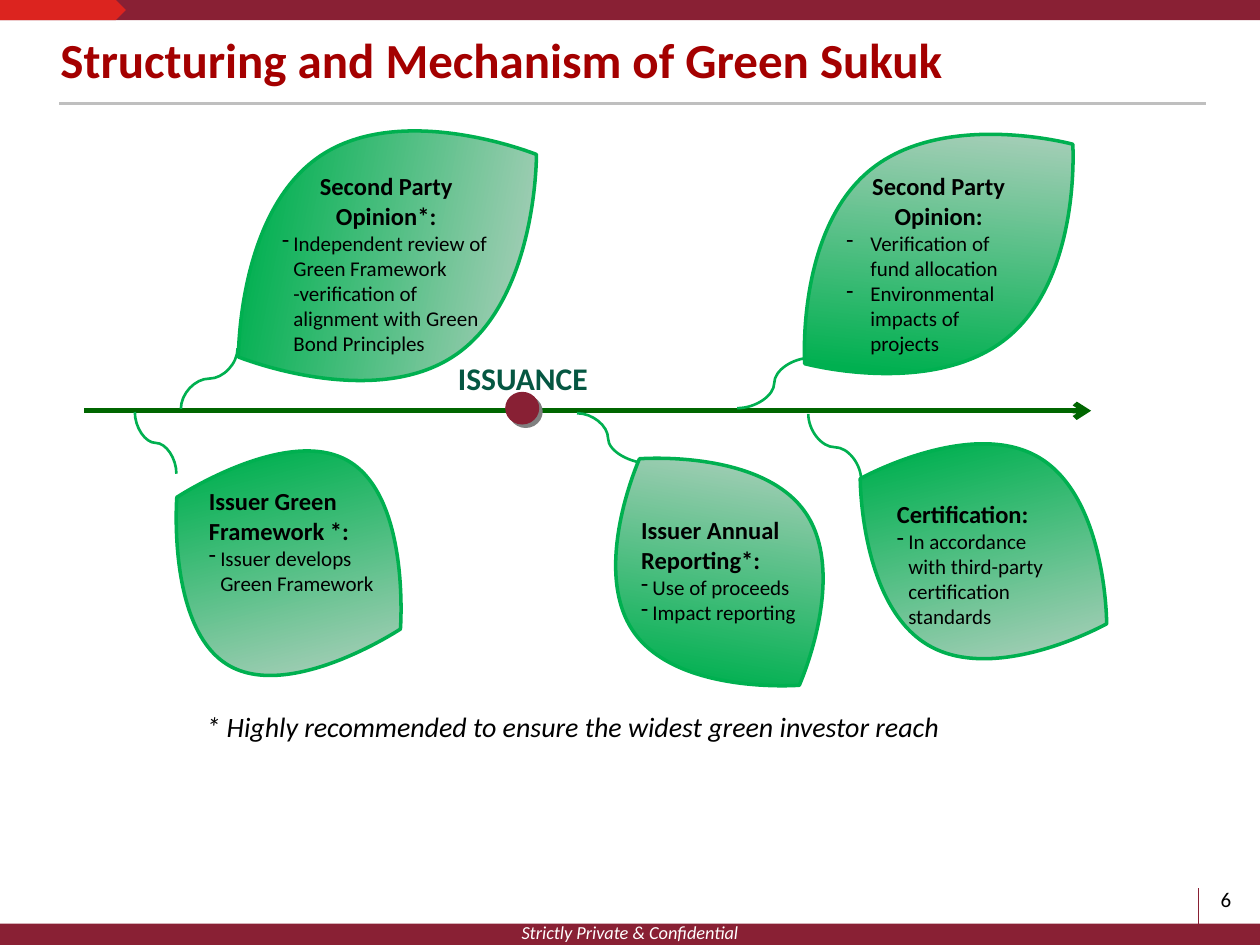
import pptx
import pptx.util
import pptx.oxml
import pptx.oxml.ns
from pptx.dml.color import RGBColor
from pptx.enum.shapes import MSO_CONNECTOR, MSO_SHAPE
from pptx.enum.text import MSO_ANCHOR, MSO_AUTO_SIZE, PP_ALIGN

Inches, Pt = pptx.util.Inches, pptx.util.Pt
FONT = "Calibri"
C = {"maroon": "892034", "dot": "882034", "red": "DC241F", "title": "A40000",
     "rule": "BFBFBF", "axis": "006600", "leaf": "00B050", "pale": "D7D7D7",
     "issuance": "055742", "shadow": "808080", "black": "000000", "white": "FFFFFF"}

# heading paragraphs, bullets, leaf box, rotation, gradient angle, text box, indent, heading alignment
LEAVES = [
    (["Second Party Opinion*:"],
     ["Independent review of Green Framework -verification of alignment with Green Bond Principles"],
     (2.12, 0.6, 1.91, 2.86), 55.8, 135, (2.14, 1.31, 1.85, 1.77), 0.09, PP_ALIGN.CENTER),
    (["Issuer Green", "Framework *:"], ["Issuer develops Green Framework"],
     (1.35, 3.44, 1.88, 2.06), 120.5, 135, (1.56, 3.81, 1.54, 0.98), 0.09, PP_ALIGN.LEFT),
    (["Certification:"], ["In accordance with third-party certification standards"],
     (6.94, 3.24, 1.73, 2.27), 120.5, 135, (7.02, 3.91, 1.51, 1.14), 0.09, PP_ALIGN.LEFT),
    (["Issuer Annual Reporting*:"], ["Use of proceeds", "Impact reporting"],
     (4.88, 3.44, 1.66, 2.2), 324.8, 135, (4.99, 4.04, 1.44, 0.98), 0.09, PP_ALIGN.LEFT),
    (["Second Party Opinion:"],
     ["Verification of fund allocation", "Environmental impacts of projects"],
     (6.59, 0.64, 1.72, 2.75), 230.7, 225, (6.62, 1.31, 1.66, 1.77), 0.19, PP_ALIGN.CENTER),
]
# frame, rotation, flips, bend position
STEMS = [
    ((1.42, 2.78, 0.48, 0.45), 90, "hv", 0.5),
    ((0.99, 3.35, 0.49, 0.33), 270, "v", 0.5),
    ((6.36, 3.34, 0.53, 0.42), 270, "v", 0.5),
    ((5.85, 2.84, 0.59, 0.4), 0, "v", 0.5),
    ((4.58, 3.28, 0.59, 0.4), 0, "", 0.417),
]


def rgb(name):
    return RGBColor.from_string(C[name])


def xml(tag, attrs="", inner=""):
    ns = pptx.oxml.ns.nsdecls("a")
    return pptx.oxml.parse_xml(f"<a:{tag} {ns} {attrs}>{inner}</a:{tag}>")


def add_run(p, text, size, color="black", bold=False, italic=False):
    r = p.add_run()
    r.text = text
    f = r.font
    f.name, f.size, f.bold, f.italic = FONT, Pt(size), bold, italic
    f.color.rgb = rgb(color)


def add_text(s, box, grow=True):
    tf = s.shapes.add_textbox(*map(Inches, box)).text_frame
    tf.word_wrap = True
    if grow:
        tf.auto_size = MSO_AUTO_SIZE.SHAPE_TO_FIT_TEXT
    return tf


def add_label(s, box, text, size, color="black", align=PP_ALIGN.LEFT, **style):
    tf = add_text(s, box)
    p = tf.paragraphs[0]
    p.alignment = align
    add_run(p, text, size, color, **style)


def add_block(s, kind, box, color):
    sp = s.shapes.add_shape(kind, *map(Inches, box))
    sp.shadow.inherit = False
    sp.fill.solid()
    sp.fill.fore_color.rgb = rgb(color)
    sp.line.fill.background()
    return sp


def add_line(s, x1, y1, x2, y2, color, width, kind=MSO_CONNECTOR.STRAIGHT):
    cxn = s.shapes.add_connector(kind, *map(Inches, (x1, y1, x2, y2)))
    cxn.line.color.rgb = rgb(color)
    cxn.line.width = Pt(width)
    cxn._element.spPr.append(xml("effectLst"))
    return cxn


def add_stem(s, frame, rotation, flips, bend):
    """Curved connector whose unrotated frame is turned about its centre."""
    x, y, w, h = frame
    x1, x2 = (x + w, x) if "h" in flips else (x, x + w)
    y1, y2 = (y + h, y) if "v" in flips else (y, y + h)
    cxn = add_line(s, x1, y1, x2, y2, "leaf", 1.5, MSO_CONNECTOR.CURVE)
    spPr = cxn._element.spPr
    spPr.xfrm.set("rot", str(rotation * 60000))
    guides = spPr.find(".//" + pptx.oxml.ns.qn("a:avLst"))
    guides.append(xml("gd", f'name="adj1" fmla="val {round(bend * 100000)}"'))


def add_leaf_shape(s, box, rotation, angle):
    """Upright leaf with pointed top and bottom, then rotated."""
    x, y, w, h = map(Inches, box)
    mid_x, mid_y = w // 2, h // 2
    corners = [(mid_x, 0), (w, mid_y), (mid_x, h), (0, mid_y)]
    fb = s.shapes.build_freeform(x, y + mid_y)
    fb.add_line_segments([(x + dx, y + dy) for dx, dy in corners], close=True)
    sp = fb.convert_to_shape()
    upper, lower = round(h * 0.224), round(h * 0.776)
    controls = [((0, upper), (mid_x, 0)), ((mid_x, 0), (w, upper)),
                ((w, lower), (mid_x, h)), ((mid_x, h), (0, lower))]
    spPr = sp._element.spPr
    sides = list(spPr.iter(pptx.oxml.ns.qn("a:lnTo")))
    for side, control, corner in zip(sides, controls, corners):
        pts = "".join(f'<a:pt x="{px}" y="{py}"/>' for px, py in (*control, corner))
        side.getparent().replace(side, xml("cubicBezTo", "", pts))
    sp.rotation = rotation
    sp.shadow.inherit = False
    sp.line.color.rgb = rgb("leaf")
    sp.line.width = Pt(2)
    stops = "".join(f'<a:gs pos="{pos * 1000}"><a:srgbClr val="{C[name]}"/></a:gs>'
                    for pos, name in ((2, "pale"), (79, "leaf"), (100, "white")))
    spPr.find(pptx.oxml.ns.qn("a:custGeom")).addnext(xml(
        "gradFill", 'rotWithShape="1"',
        f'<a:gsLst>{stops}</a:gsLst><a:lin ang="{angle * 60000}" scaled="0"/>'))


def add_leaf(s, heads, bullets, box, rotation, angle, text_box, indent, align):
    add_leaf_shape(s, box, rotation, angle)
    tf = add_text(s, text_box)
    for i, text in enumerate(heads + bullets):
        p = tf.paragraphs[0] if i == 0 else tf.add_paragraph()
        if i < len(heads):
            p.alignment = align
            add_run(p, text, 14, bold=True)
        else:
            pPr = p._p.get_or_add_pPr()
            pPr.set("marL", str(Inches(indent)))
            pPr.set("indent", str(-Inches(indent)))
            pPr.append(xml("buFontTx"))
            pPr.append(xml("buChar", 'char="-"'))
            add_run(p, text, 12)


def add_frame(s):
    """Top and bottom bands, confidentiality line and page number."""
    add_line(s, 9.51, 7.05, 9.51, 7.35, "maroon", 0.75)
    add_block(s, MSO_SHAPE.RECTANGLE, (0, 7.33, 10, 0.17), "maroon")
    add_block(s, MSO_SHAPE.RECTANGLE, (0, 0, 10, 0.16), "maroon")
    add_block(s, MSO_SHAPE.PENTAGON, (0, 0, 1, 0.16), "red")
    add_label(s, (0, 7.26, 10, 0.45), "Strictly Private & Confidential", 10.5, "white",
              PP_ALIGN.CENTER, italic=True)
    tf = add_text(s, (9.54, 6.99, 0.38, 0.29), grow=False)
    tf.word_wrap = False
    tf.vertical_anchor = MSO_ANCHOR.MIDDLE
    tf.margin_left = tf.margin_right = tf.margin_top = tf.margin_bottom = 0
    tf.paragraphs[0].alignment = PP_ALIGN.CENTER
    add_run(tf.paragraphs[0], "6", 12)


def add_title(s, box, text):
    sp = s.shapes.title
    sp.left, sp.top, sp.width, sp.height = map(Inches, box)
    tf = sp.text_frame
    tf.word_wrap = True
    tf.auto_size = MSO_AUTO_SIZE.NONE
    tf.vertical_anchor = MSO_ANCHOR.MIDDLE
    tf.margin_left = tf.margin_right = tf.margin_top = tf.margin_bottom = Inches(0.05)
    p = tf.paragraphs[0]
    p.alignment = PP_ALIGN.LEFT
    p.line_spacing = 0.9
    p.space_after = Pt(6)
    add_run(p, text, 28, "title", bold=True)
    add_line(s, 0.47, 0.82, 9.57, 0.82, "rule", 1.5)


def add_timeline(s):
    axis = add_line(s, 0.67, 3.26, 8.66, 3.26, "axis", 3)
    axis.line._get_or_add_ln().append(xml("tailEnd", 'type="arrow"'))
    dot = add_block(s, MSO_SHAPE.OVAL, (4.01, 3.11, 0.27, 0.26), "dot")
    dot._element.spPr.find(pptx.oxml.ns.qn("a:effectLst")).append(xml(
        "outerShdw", f'dist="{Pt(2.8)}" dir="2700000" algn="ctr" rotWithShape="0"',
        f'<a:srgbClr val="{C["shadow"]}"/>'))
    add_label(s, (3.43, 2.8, 1.44, 0.71), "ISSUANCE", 18, "issuance",
              PP_ALIGN.CENTER, bold=True)


def main():
    prs = pptx.Presentation()
    prs.slide_width, prs.slide_height = Inches(10), Inches(7.5)
    s = prs.slides.add_slide(prs.slide_layouts[5])
    add_frame(s)
    add_title(s, (0.43, 0.15, 7.4, 0.7), "Structuring and Mechanism of Green Sukuk")
    add_timeline(s)
    for stem in STEMS:
        add_stem(s, *stem)
    for leaf in LEAVES:
        add_leaf(s, *leaf)
    add_label(s, (1.54, 5.58, 6.69, 0.37),
              "* Highly recommended to ensure the widest green investor reach", 16, italic=True)
    prs.save("out.pptx")


if __name__ == "__main__":
    main()
